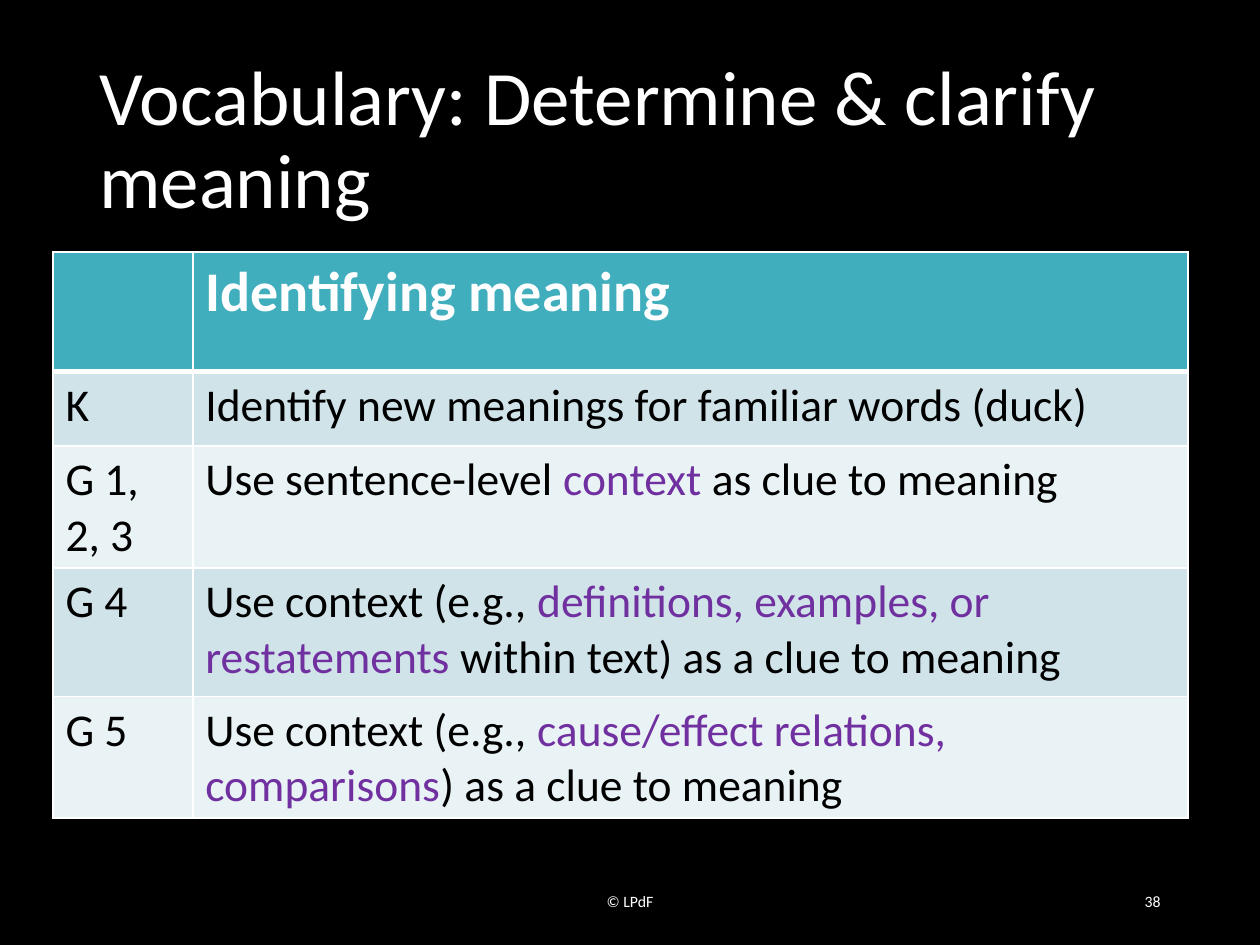
from lxml import etree
from pptx import Presentation
from pptx.dml.color import RGBColor
from pptx.enum import text
from pptx.oxml import ns
from pptx.util import Inches, Pt

WHITE = RGBColor(0xFF, 0xFF, 0xFF)
BLACK = RGBColor(0, 0, 0)
TEAL = RGBColor(0x41, 0xAE, 0xBD)
PALE_TEAL = RGBColor(0xCF, 0xE3, 0xE8)
PALEST_TEAL = RGBColor(0xE9, 0xF2, 0xF4)
PURPLE = RGBColor(0x70, 0x30, 0xA0)


def add_run(paragraph, words, size, color, bold=False):
    run = paragraph.add_run()
    run.text = words
    run.font.name = "Calibri"
    run.font.size = Pt(size)
    run.font.bold = bold
    run.font.color.rgb = color


def add_border(cell, position, side, width):
    line = etree.Element(ns.qn(f"a:ln{side}"), w=str(Pt(width)))
    fill = etree.SubElement(line, ns.qn("a:solidFill"))
    etree.SubElement(fill, ns.qn("a:srgbClr"), val=str(WHITE))
    cell._tc.get_or_add_tcPr().insert(position, line)


presentation = Presentation()
presentation.slide_width = Inches(10)
presentation.slide_height = Inches(7.5)
slide = presentation.slides.add_slide(presentation.slide_layouts[6])
slide.background.fill.solid()
slide.background.fill.fore_color.rgb = BLACK

labels = [
    (0.69, 0.4, 8.62, 1.45, "Vocabulary: Determine & clarify meaning", 44, text.PP_ALIGN.LEFT, 0.9),
    (3.31, 6.95, 3.38, 0.4, "© LPdF", 9, text.PP_ALIGN.CENTER, 1.0),
    (7.06, 6.95, 2.25, 0.4, "38", 9, text.PP_ALIGN.RIGHT, 1.0),
]
for left, top, width, height, words, size, alignment, spacing in labels:
    shape = slide.shapes.add_textbox(Inches(left), Inches(top), Inches(width), Inches(height))
    shape.text_frame.word_wrap = True
    shape.text_frame.vertical_anchor = text.MSO_ANCHOR.MIDDLE
    paragraph = shape.text_frame.paragraphs[0]
    paragraph.alignment = alignment
    paragraph.line_spacing = spacing
    add_run(paragraph, words, size, WHITE)

rows = [
    ("", ["Identifying meaning"]),
    ("K", ["Identify new meanings for familiar words (duck)"]),
    ("G 1, 2, 3", ["Use sentence-level", " context ", "as clue to meaning"]),
    ("G 4", ["Use context (e.g., ", "definitions, examples, or restatements ",
             "within text) as a clue to meaning"]),
    ("G 5", ["Use context (e.g., ", "cause/effect relations, comparisons",
             ") as a clue to meaning"]),
]
column_widths = [1.11, 7.9]
row_heights = [0.95, 0.59, 0.59, 1.02, 0.59]

table = slide.shapes.add_table(
    len(rows), len(column_widths), Inches(0.42), Inches(2),
    Inches(sum(column_widths)), Inches(sum(row_heights))).table
for column, width in zip(table.columns, column_widths):
    column.width = Inches(width)
for row, height in zip(table.rows, row_heights):
    row.height = Inches(height)

for row_index, (grade, skill) in enumerate(rows):
    header = row_index == 0
    row_fill = TEAL if header else (PALEST_TEAL, PALE_TEAL)[row_index % 2]
    size = 32 if header else 26
    for column_index, pieces in enumerate([[grade], skill]):
        cell = table.cell(row_index, column_index)
        cell.fill.solid()
        cell.fill.fore_color.rgb = row_fill
        border_widths = {"L": 1, "R": 1, "T": 3 if row_index == 1 else 1, "B": 3 if header else 1}
        for position, (side, width) in enumerate(border_widths.items()):
            add_border(cell, position, side, width)
        paragraph = cell.text_frame.paragraphs[0]
        for piece_index, piece in enumerate(pieces):
            if piece:
                color = WHITE if header else (BLACK, PURPLE)[piece_index % 2]
                add_run(paragraph, piece, size, color, header)

presentation.save("out.pptx")
